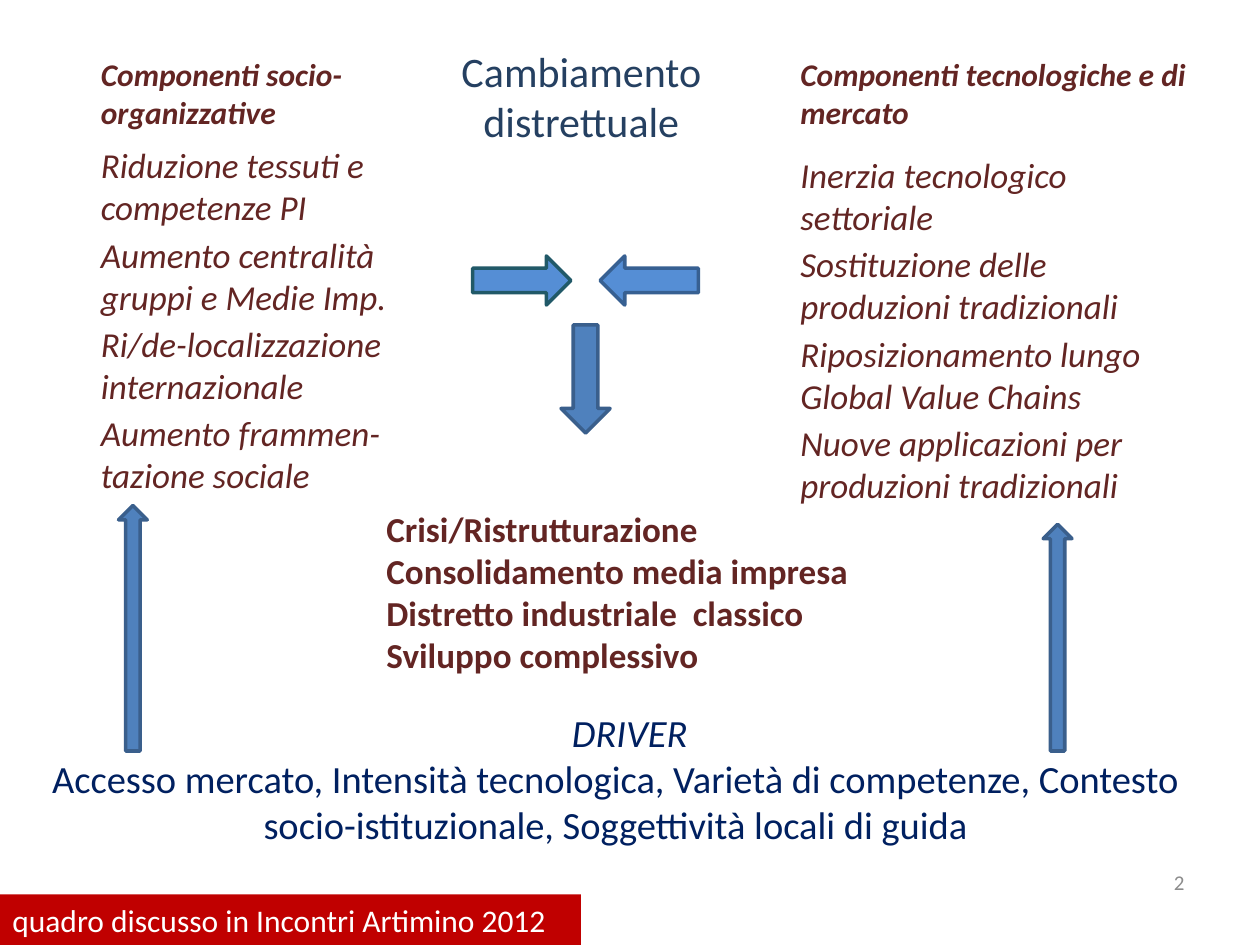
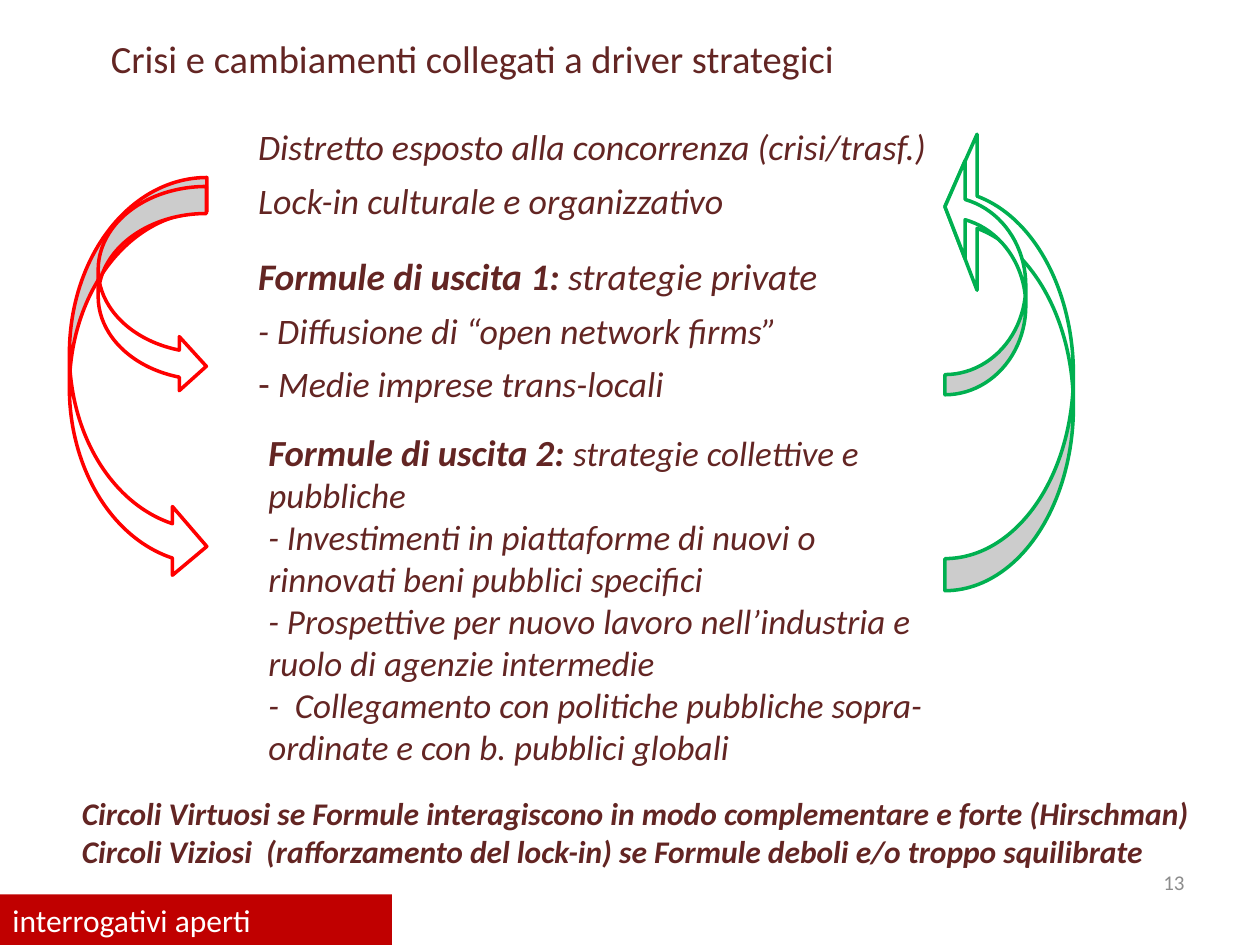
from dataclasses import dataclass, field

from lxml.etree import SubElement
from pptx import Presentation
from pptx.dml.color import RGBColor
from pptx.enum.shapes import MSO_SHAPE as Preset
from pptx.enum.text import MSO_ANCHOR as Anchor
from pptx.enum.text import MSO_AUTO_SIZE as AutoSize
from pptx.enum.text import PP_ALIGN as Align
from pptx.oxml.ns import qn
from pptx.util import Cm, Pt

MAROON, NAVY, STEEL, RED = "632523", "002060", "254061", "C00000"
WHITE, GREY = "FFFFFF", "8C8C8C"
BLUE, BLUE_EDGE, SKY = "4F81BD", "3A5F8C", "558ED5"

LIST_FONT = {"size": Pt(20), "italic": True}
HEADING_FONT = {"size": Pt(18), "bold": True, "italic": True}
LIST_SPACING = {"line_spacing": Pt(24), "space_after": Pt(3)}


@dataclass
class Box:
    """A rectangle in centimetres."""
    left: float
    top: float
    width: float
    height: float

    def inside(self, left, top, width, height):
        """Return a box placed relative to this one."""
        return Box(self.left + left, self.top + top, width, height)

    def lengths(self):
        """Return the four lengths for the slide."""
        return [Cm(value) for value in (self.left, self.top, self.width, self.height)]


@dataclass
class Line:
    """A paragraph with its runs and its own formats."""
    runs: list
    spacing: dict = field(default_factory=dict)
    bullet: str = ""
    indent: float = 0


def color(value):
    """Turn a hex string into a colour."""
    return RGBColor.from_string(value)


def apply(target, formats):
    """Set each format value on the target."""
    for name, value in formats.items():
        setattr(target, name, value)


def add_run(paragraph, text, font, hex_color):
    """Add text to a paragraph, breaking lines at newlines."""
    for number, part in enumerate(text.split("\n")):
        if number:
            paragraph.add_line_break()
        run = paragraph.add_run()
        run.text = part
        apply(run.font, {"name": "Calibri", "bold": False, "italic": False, **font})
        run.font.color.rgb = color(hex_color)


def write(shape, lines, font, hex_color=MAROON, spacing=None, anchor=Anchor.TOP):
    """Write the lines into a shape with shared formats."""
    frame = shape.text_frame
    apply(frame, {"word_wrap": True, "auto_size": AutoSize.NONE, "vertical_anchor": anchor})
    for number, line in enumerate(lines):
        line = Line([(line, {})]) if isinstance(line, str) else line
        paragraph = frame.add_paragraph() if number else frame.paragraphs[0]
        apply(paragraph, {"alignment": Align.LEFT, "space_before": Pt(0),
                          **(spacing or {}), **line.spacing})
        properties = paragraph._p.get_or_add_pPr()
        properties.set("marL", str(Cm(line.indent)))
        properties.set("indent", "0")
        if line.bullet:
            SubElement(properties, qn("a:buChar")).set("char", line.bullet)
        else:
            SubElement(properties, qn("a:buNone"))
        for text, changes in line.runs:
            add_run(paragraph, text, {**font, **changes}, hex_color)


def add_text(slide, box, lines, font, **options):
    """Add a text box."""
    write(slide.shapes.add_textbox(*box.lengths()), lines, font, **options)


def fill_placeholder(slide, index, box, lines, font, **options):
    """Move a placeholder to the box and fill it."""
    placeholder = slide.placeholders[index]
    apply(placeholder, dict(zip(("left", "top", "width", "height"), box.lengths())))
    write(placeholder, lines, font, **options)


def add_preset(slide, preset, box, fill, edge=None):
    """Add a flat preset shape with an optional outline."""
    shape = slide.shapes.add_shape(preset, *box.lengths())
    shape.shadow.inherit = False
    shape.fill.solid()
    shape.fill.fore_color.rgb = color(fill)
    if edge:
        shape.line.color.rgb = color(edge)
        shape.line.width = Pt(2)
    else:
        shape.line.fill.background()
    return shape


def add_footer(slide, box, band_width, label, number):
    """Add the red band and the slide number."""
    band = add_preset(slide, Preset.RECTANGLE, box.inside(0, 0.38, band_width, 1.02), RED)
    write(band, [label], {"size": Pt(18)}, hex_color=WHITE)
    add_text(slide, box.inside(box.width - 7.19, -0.38, 5.92, 1.02), [number],
             {"size": Pt(12)}, hex_color=GREY, spacing={"alignment": Align.RIGHT},
             anchor=Anchor.MIDDLE)


def add_components(slide, box, first_index, heading, heading_height, items):
    """Fill a heading and the list below it."""
    fill_placeholder(slide, first_index, box.inside(0, 0, box.width, heading_height),
                     [heading], HEADING_FONT)
    fill_placeholder(slide, first_index + 1, box.inside(0, heading_height, 7.5, 7.42),
                     items, LIST_FONT, spacing=LIST_SPACING)


def add_converging_arrows(slide, box):
    """Add two facing arrows above a central down arrow."""
    length, thickness, drop = 1.98, 0.99, 2.18
    add_preset(slide, Preset.RIGHT_ARROW, box.inside(0, 0, length, thickness), SKY, "215968")
    add_preset(slide, Preset.LEFT_ARROW,
               box.inside(box.width - length, 0, length, thickness), SKY, "376092")
    add_preset(slide, Preset.DOWN_ARROW,
               box.inside((box.width - thickness) / 2, box.height - drop, thickness, drop),
               BLUE, BLUE_EDGE)


def add_drivers(slide, box):
    """Add the drivers and the arrows that rise from them."""
    lines = [
        Line([("DRIVER", {"italic": True})], indent=0.57),
        "Accesso mercato, Intensità tecnologica, Varietà di competenze, "
        "Contesto socio-istituzionale, Soggettività locali di guida",
    ]
    add_text(slide, box, lines, {"size": Pt(22)}, hex_color=NAVY,
             spacing={"alignment": Align.CENTER})
    for left, rise in ((1.98, 4.95), (20.62, 4.57)):
        add_preset(slide, Preset.UP_ARROW, box.inside(left, 0.97 - rise, 0.58, rise),
                   BLUE, BLUE_EDGE)


def add_loop(slide, preset, boxes, edge, upward=False):
    """Add nested curved arrows, turned upward when asked."""
    for box in boxes:
        arrow = add_preset(slide, preset, box, WHITE, edge)
        if upward:
            arrow.element.spPr.xfrm.set("flipV", "1")
            arrow.adjustments[1] = 1.214


def build_change_slide(presentation, box):
    """Build the slide on district change."""
    slide = presentation.slides.add_slide(presentation.slide_layouts[4])
    fill_placeholder(slide, 0, box.inside(8.94, 0.79, 5.56, 2.31),
                     ["Cambiamento distrettuale"], {"size": Pt(24)}, hex_color=STEEL,
                     spacing={"alignment": Align.CENTER})
    add_components(slide, box.inside(1.78, 0.99, 6.15, 9.2), 1,
                   "Componenti socio-organizzative", 1.78,
                   ["Riduzione tessuti e competenze PI",
                    "Aumento centralità gruppi e Medie Imp.",
                    "Ri/de-localizzazione internazionale",
                    "Aumento frammen-tazione sociale"])
    add_components(slide, box.inside(15.88, 0.99, 8.53, 9.4), 3,
                   "Componenti tecnologiche e di mercato", 1.98,
                   ["Inerzia tecnologico settoriale",
                    "Sostituzione delle produzioni tradizionali",
                    "Riposizionamento lungo Global Value Chains",
                    "Nuove applicazioni per produzioni tradizionali"])
    add_converging_arrows(slide, box.inside(9.53, 5.16, 4.55, 3.57))
    add_text(slide, box.inside(7.54, 10.11, 10.11, 3.68),
             ["Crisi/Ristrutturazione", "Consolidamento media impresa",
              "Distretto industriale  classico", "Sviluppo complessivo"],
             {"size": Pt(20), "bold": True})
    add_drivers(slide, box.inside(0.41, 14.17, 24, 3.11))
    add_footer(slide, box.inside(0, 17.65, box.width, 1.4), 11.71,
               "quadro discusso in Incontri Artimino 2012", "2")


def build_strategy_slide(presentation, box):
    """Build the slide on strategic drivers."""
    slide = presentation.slides.add_slide(presentation.slide_layouts[1])
    strong = {"size": Pt(21.4), "bold": True}
    fill_placeholder(slide, 0, box.inside(1.98, 0.58, 22.43, 1.19),
                     ["Crisi e cambiamenti collegati a driver strategici"], {"size": Pt(22)})
    fill_placeholder(slide, 1, box.inside(4.95, 2.39, 14.48, 6.35), [
        "Distretto esposto alla concorrenza (crisi/trasf.)",
        "Lock-in culturale e organizzativo",
        Line([("Formule di uscita 1: ", strong), ("strategie private", {"size": Pt(21.4)})],
             {"space_before": Pt(12)}),
        "- Diffusione di “open network firms”",
        Line([(" Medie imprese trans-locali", {})], bullet="-"),
    ], {"size": Pt(20.5), "italic": True}, spacing={"space_after": Pt(6)})
    add_text(slide, box.inside(5.16, 8.53, 14.1, 7.54), [Line([
        ("Formule di uscita 2: ", {"size": Pt(21), "bold": True}),
        ("strategie collettive e pubbliche\n"
         "- Investimenti in piattaforme di nuovi o rinnovati beni pubblici specifici\n"
         "- Prospettive per nuovo lavoro nell’industria e ruolo di agenzie intermedie\n"
         "-  Collegamento con politiche pubbliche sopra-ordinate e con b. pubblici globali",
         {}),
    ])], LIST_FONT)
    add_loop(slide, Preset.CURVED_RIGHT_ARROW,
             [box.inside(1.4, 3.58, 2.77, 8.13), box.inside(1.98, 3.76, 2.18, 4.17)], "FF0000")
    add_loop(slide, Preset.CURVED_LEFT_ARROW,
             [box.inside(19.05, 2.59, 2.59, 9.32), box.inside(19.05, 3.18, 1.63, 4.78)],
             "00B050", upward=True)
    add_text(slide, box.inside(1.4, 15.88, 23.01, 1.8), [
        "Circoli Virtuosi se Formule interagiscono in modo complementare e forte (Hirschman)\n"
        "Circoli Viziosi  (rafforzamento del lock-in) se Formule deboli e/o troppo squilibrate",
    ], HEADING_FONT)
    add_footer(slide, box.inside(0, 17.65, box.width, 1.4), 7.9, "interrogativi aperti", "13")


def main():
    """Build and save the presentation."""
    presentation = Presentation()
    page = Box(0, 0, 25.4, 19.05)
    presentation.slide_width, presentation.slide_height = Cm(page.width), Cm(page.height)
    build_change_slide(presentation, page)
    build_strategy_slide(presentation, page)
    presentation.save("out.pptx")


if __name__ == "__main__":
    main()
